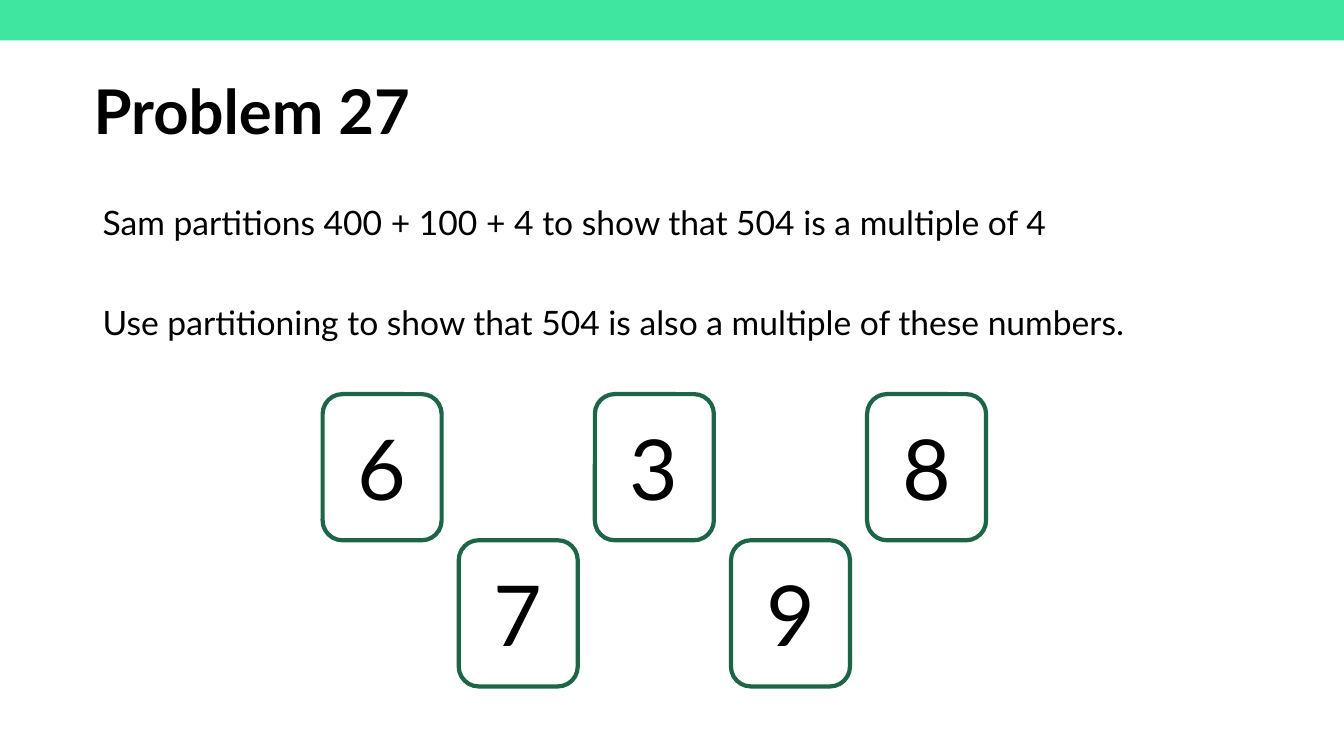
from pptx import Presentation
from pptx.dml.color import RGBColor
from pptx.enum.shapes import MSO_SHAPE as SHAPE
from pptx.enum.text import MSO_ANCHOR as ANCHOR, PP_ALIGN as ALIGN
from pptx.util import Inches, Pt

COLORS = {"band": "3FE6A0", "card": "1C6546", "text": "000000"}
FONT = "Lato"


def color(name):
    """Return the named colour."""
    return RGBColor.from_string(COLORS[name])


def style(p, size, bold=False):
    """Set the font of a paragraph."""
    p.font.name = FONT
    p.font.size = Pt(size)
    p.font.bold = bold
    p.font.color.rgb = color("text")


def add_band(slide, left, top, width, height):
    """Draw the coloured band along the top edge."""
    sp = slide.shapes.add_shape(SHAPE.RECTANGLE, Inches(left), Inches(top),
                                Inches(width), Inches(height))
    sp.shadow.inherit = False
    sp.fill.solid()
    sp.fill.fore_color.rgb = color("band")
    sp.line.fill.background()


def add_text(slide, left, top, width, height, lines, size, bold=False,
             anchor=ANCHOR.TOP, gap=0):
    """Write lines of text with a gap in points between them."""
    box = slide.shapes.add_textbox(Inches(left), Inches(top),
                                   Inches(width), Inches(height))
    tf = box.text_frame
    tf.word_wrap = True
    tf.vertical_anchor = anchor
    for i, line in enumerate(lines):
        p = tf.add_paragraph() if i else tf.paragraphs[0]
        p.text = line
        p.line_spacing = 0.9
        if i:
            p.space_before = Pt(gap)
        style(p, size, bold)


def add_card(slide, left, top, width, height, number):
    """Draw one outlined number card."""
    sp = slide.shapes.add_shape(SHAPE.ROUNDED_RECTANGLE, Inches(left), Inches(top),
                                Inches(width), Inches(height))
    sp.shadow.inherit = False
    sp.fill.background()
    sp.line.color.rgb = color("card")
    sp.line.width = Pt(3)
    tf = sp.text_frame
    tf.vertical_anchor = ANCHOR.MIDDLE
    p = tf.paragraphs[0]
    p.text = number
    p.alignment = ALIGN.CENTER
    style(p, 60)


def add_cards(slide, left, top, numbers, width=1.18, height=1.45, step=1.35):
    """Place number cards alternately in an upper and a lower row."""
    for i, number in enumerate(numbers):
        add_card(slide, left + i * step, top + i % 2 * height, width, height, number)


def main():
    """Build and save the problem slide."""
    prs = Presentation()
    prs.slide_width, prs.slide_height = Inches(13.33), Inches(7.5)
    slide = prs.slides.add_slide(prs.slide_layouts[6])
    add_band(slide, 0, -0.02, 13.33, 0.42)
    add_text(slide, 0.83, 0.41, 11.5, 1.45, ["Problem 27"], 44, True, ANCHOR.MIDDLE)
    add_text(slide, 0.92, 2, 10.62, 2.18, [
        "Sam partitions 400 + 100 + 4 to show that 504 is a multiple of 4",
        "Use partitioning to show that 504 is also a multiple of these numbers.",
    ], 24, gap=45.5)
    add_cards(slide, 3.2, 3.91, "67398")
    prs.save("out.pptx")


if __name__ == "__main__":
    main()
